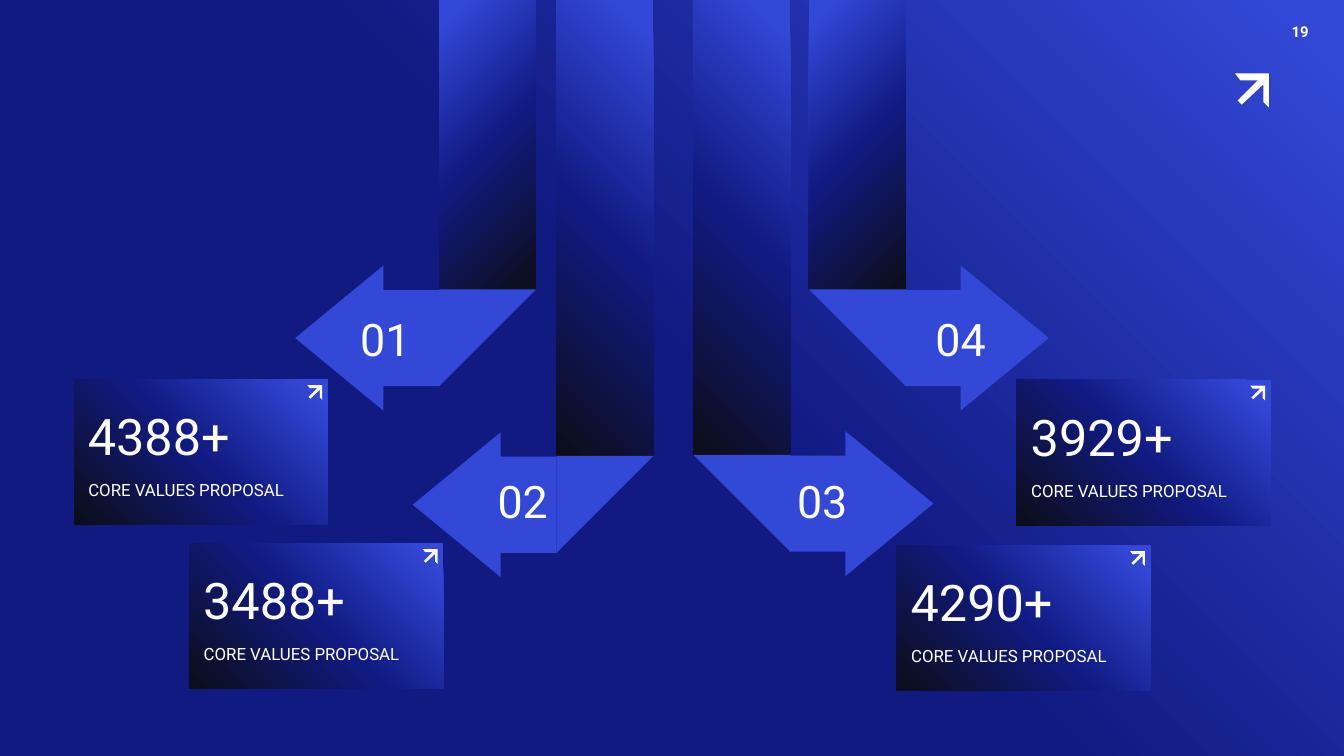
from dataclasses import dataclass

from lxml.etree import SubElement
from pptx import Presentation
from pptx.dml.color import RGBColor
from pptx.enum.shapes import MSO_SHAPE as Preset
from pptx.enum.text import PP_ALIGN as Align
from pptx.oxml.ns import qn
from pptx.util import Cm, Pt

COLORS = {"white": "FFFFFF", "bright": "3348D7", "deep": "111A81", "night": "0C0D17"}
FONT = "Roboto"

# Gradient stops: percent and colour name
BACKDROP = [(0, "deep"), (51, "deep"), (98, "bright"), (100, "bright")]
FADE = [(0, "bright"), (6, "bright"), (51, "deep"), (100, "night")]

# North-east arrow outline in a unit square
ICON = [(1, 0), (1, 1), (0.84, 0.84), (0.84, 0.32), (0.2, 0.92),
        (0.08, 0.8), (0.68, 0.2), (0.16, 0.2), (0, 0)]

RIBBON_WIDTH = 1.83
ARROW_WIDTH, ARROW_HEIGHT = 2.74, 2.72


@dataclass(frozen=True)
class Ribbon:
    number: str
    left: float
    length: float
    points_left: bool
    fade_angle: int
    label_left: float
    label_top: float
    label_width: float


@dataclass(frozen=True)
class Card:
    value: str
    left: float
    top: float


RIBBONS = [
    Ribbon("02", 10.52, 8.62, True, 135, 8.66, 8.86, 2.44),
    Ribbon("03", 13.11, 8.6, False, 135, 14.55, 8.86, 1.98),
    Ribbon("01", 8.3, 5.47, True, 45, 6.55, 5.79, 1.47),
    Ribbon("04", 15.29, 5.47, False, 45, 17.15, 5.79, 2.01),
]
CARDS = [
    Card("3929+", 19.22, 7.18),
    Card("4290+", 16.95, 10.31),
    Card("3488+", 3.58, 10.27),
    Card("4388+", 1.4, 7.17),
]


def rgb(name: str) -> RGBColor:
    return RGBColor.from_string(COLORS[name])


def fill_gradient(fill, owner, stops: list, angle: int) -> None:
    """Fill with a linear gradient running clockwise from the left-right axis."""
    fill.gradient()
    fill.gradient_angle = 360 - angle
    stop_list = next(owner.iter(qn("a:gsLst")))
    for old_stop in list(stop_list):
        stop_list.remove(old_stop)
    for percent, name in stops:
        stop = SubElement(stop_list, qn("a:gs"), pos=str(percent * 1000))
        SubElement(stop, qn("a:srgbClr"), val=COLORS[name])


def add_preset(slide, preset, left: float, top: float, width: float, height: float,
               rotation: int = 0, adjustments: tuple = (), fade_angle: int | None = None):
    shape = slide.shapes.add_shape(preset, Cm(left), Cm(top), Cm(width), Cm(height))
    shape.shadow.inherit = False
    shape.line.fill.background()
    shape.rotation = rotation
    for index, value in enumerate(adjustments):
        shape.adjustments[index] = value
    if fade_angle is None:
        shape.fill.solid()
        shape.fill.fore_color.rgb = rgb("bright")
    else:
        fill_gradient(shape.fill, shape._element, FADE, fade_angle)


def add_text(slide, text: str, left: float, top: float, width: float, height: float,
             size: int, align=Align.LEFT, bold: bool = False, spacing: float = 1.0) -> None:
    frame = slide.shapes.add_textbox(Cm(left), Cm(top), Cm(width), Cm(height)).text_frame
    frame.word_wrap = True
    frame.margin_left = frame.margin_right = Cm(0.18)
    frame.margin_top = frame.margin_bottom = Cm(0.1)
    paragraph = frame.paragraphs[0]
    paragraph.alignment = align
    paragraph.line_spacing = spacing
    run = paragraph.add_run()
    run.text = text
    run.font.name = FONT
    run.font.size = Pt(size)
    run.font.bold = bold
    run.font.color.rgb = rgb("white")


def add_icon(slide, left: float, top: float, size: float) -> None:
    corners = [(Cm(left + x * size), Cm(top + y * size)) for x, y in ICON]
    builder = slide.shapes.build_freeform(*corners[0])
    builder.add_line_segments(corners[1:], close=True)
    icon = builder.convert_to_shape()
    icon.shadow.inherit = False
    icon.fill.solid()
    icon.fill.fore_color.rgb = rgb("white")
    icon.line.fill.background()


def add_ribbon(slide, ribbon: Ribbon) -> None:
    arrow_left = ribbon.left + (-2.73 if ribbon.points_left else 1.8)
    add_preset(slide, Preset.ROUND_2_SAME_RECTANGLE, ribbon.left, 0, RIBBON_WIDTH,
               ribbon.length, adjustments=(0, 0), fade_angle=ribbon.fade_angle)
    # Folded corner, then the arrow it turns into
    add_preset(slide, Preset.RIGHT_TRIANGLE, ribbon.left, ribbon.length, RIBBON_WIDTH,
               RIBBON_WIDTH, rotation=90 if ribbon.points_left else 180)
    add_preset(slide, Preset.UP_ARROW, arrow_left, ribbon.length - 0.44, ARROW_WIDTH,
               ARROW_HEIGHT, rotation=270 if ribbon.points_left else 90,
               adjustments=(0.663, 0.612))
    add_text(slide, ribbon.number, ribbon.label_left, ribbon.label_top,
             ribbon.label_width, 1.22, 24, Align.CENTER)


def add_card(slide, card: Card) -> None:
    add_preset(slide, Preset.RECTANGLE, card.left, card.top, 4.8, 2.75, fade_angle=135)
    add_text(slide, "CORE VALUES PROPOSAL", card.left + 0.09, card.top + 1.69,
             4.29, 0.66, 9, spacing=1.3)
    add_text(slide, card.value, card.left + 0.08, card.top + 0.39, 4.22, 1.35, 27)
    add_icon(slide, card.left + 4.41, card.top + 0.11, 0.28)


def main() -> None:
    deck = Presentation()
    deck.slide_width, deck.slide_height = Cm(25.4), Cm(14.29)
    slide = deck.slides.add_slide(deck.slide_layouts[6])
    fill_gradient(slide.background.fill, slide._element, BACKDROP, 315)

    # Page number
    add_text(slide, "19", 24.23, 0.33, 0.71, 0.53, 8, bold=True)

    # Numbered ribbons and their figures
    for ribbon in RIBBONS:
        add_ribbon(slide, ribbon)
    for card in CARDS:
        add_card(slide, card)

    # Corner arrow
    add_icon(slide, 23.34, 1.39, 0.64)

    deck.save("out.pptx")


if __name__ == "__main__":
    main()
